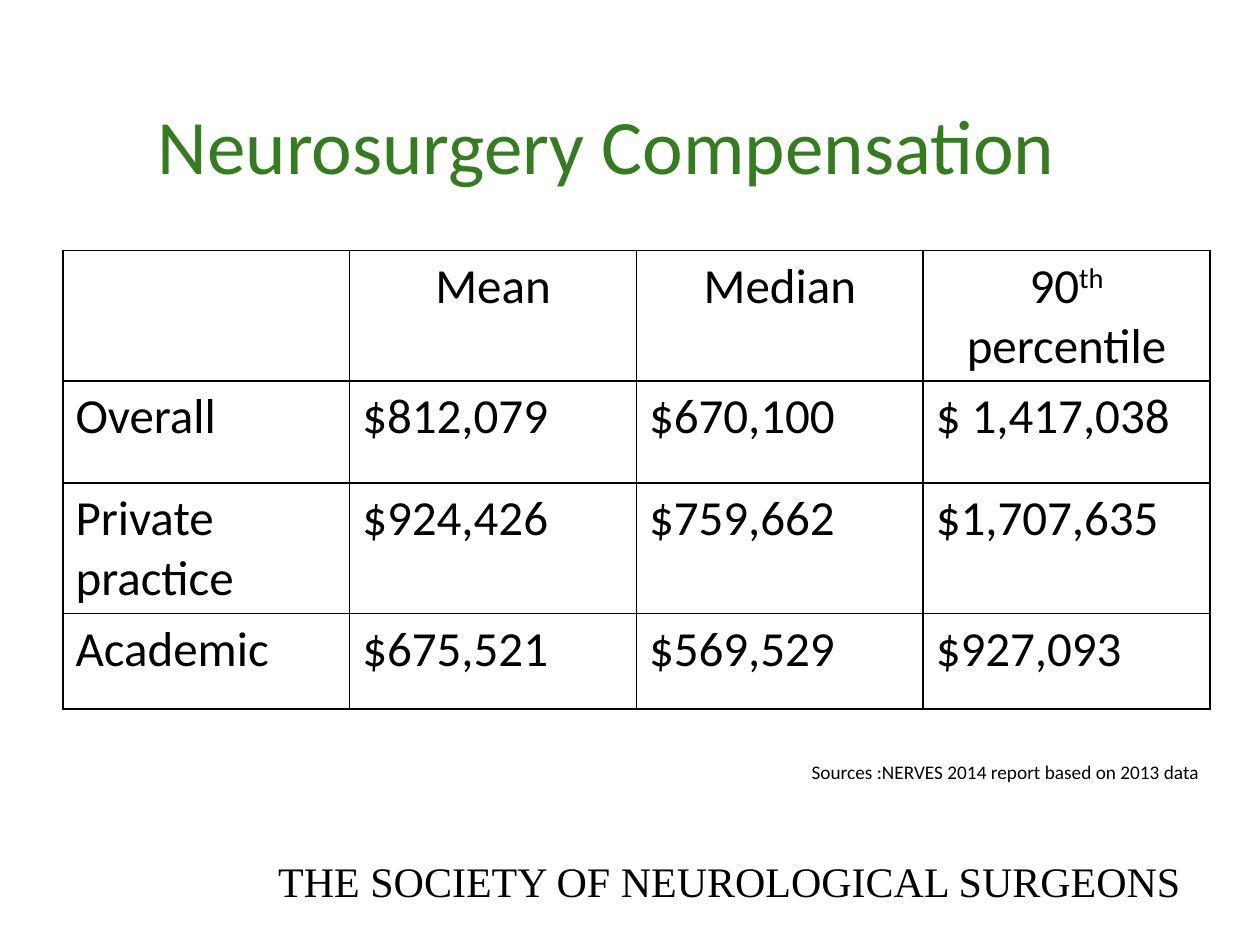
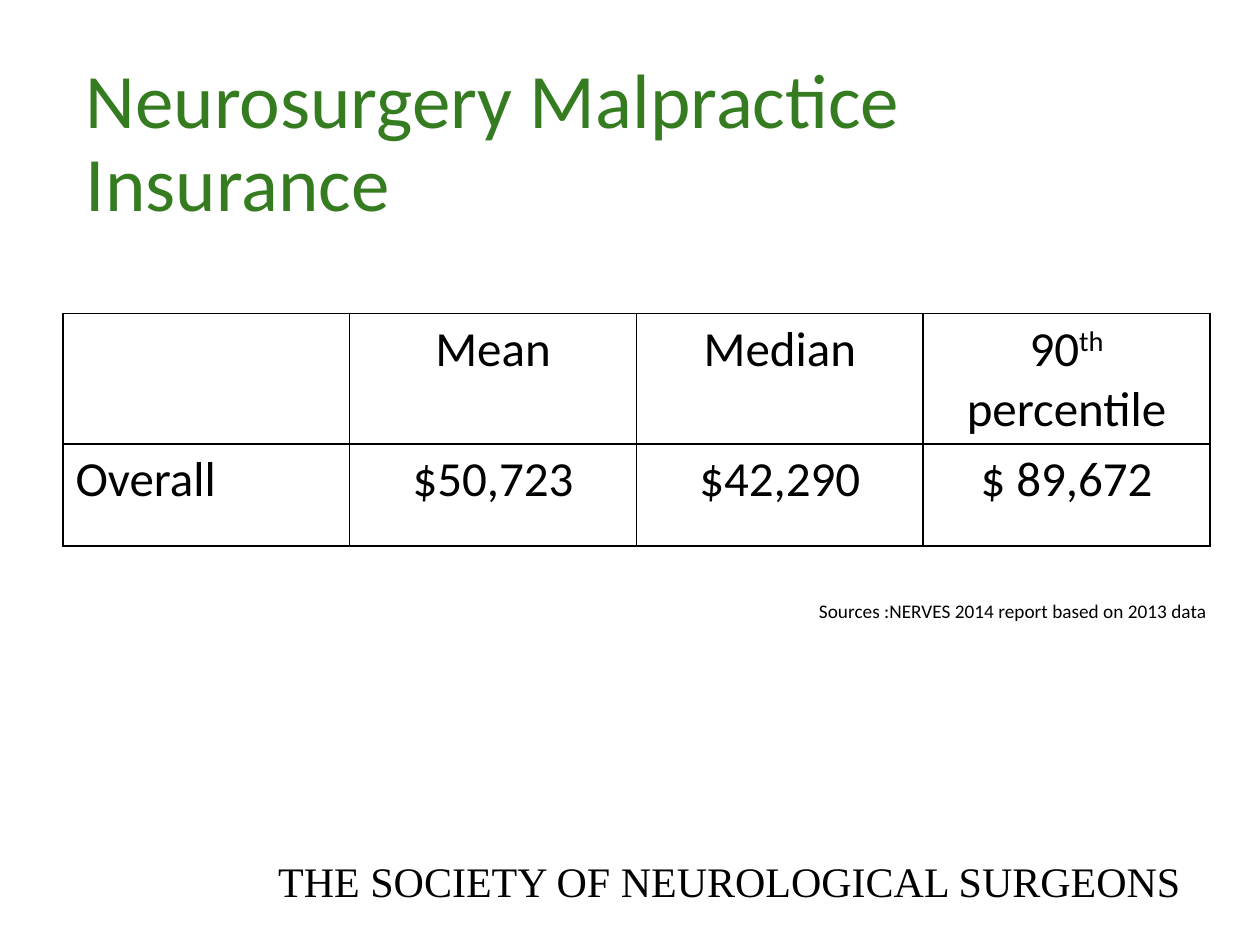
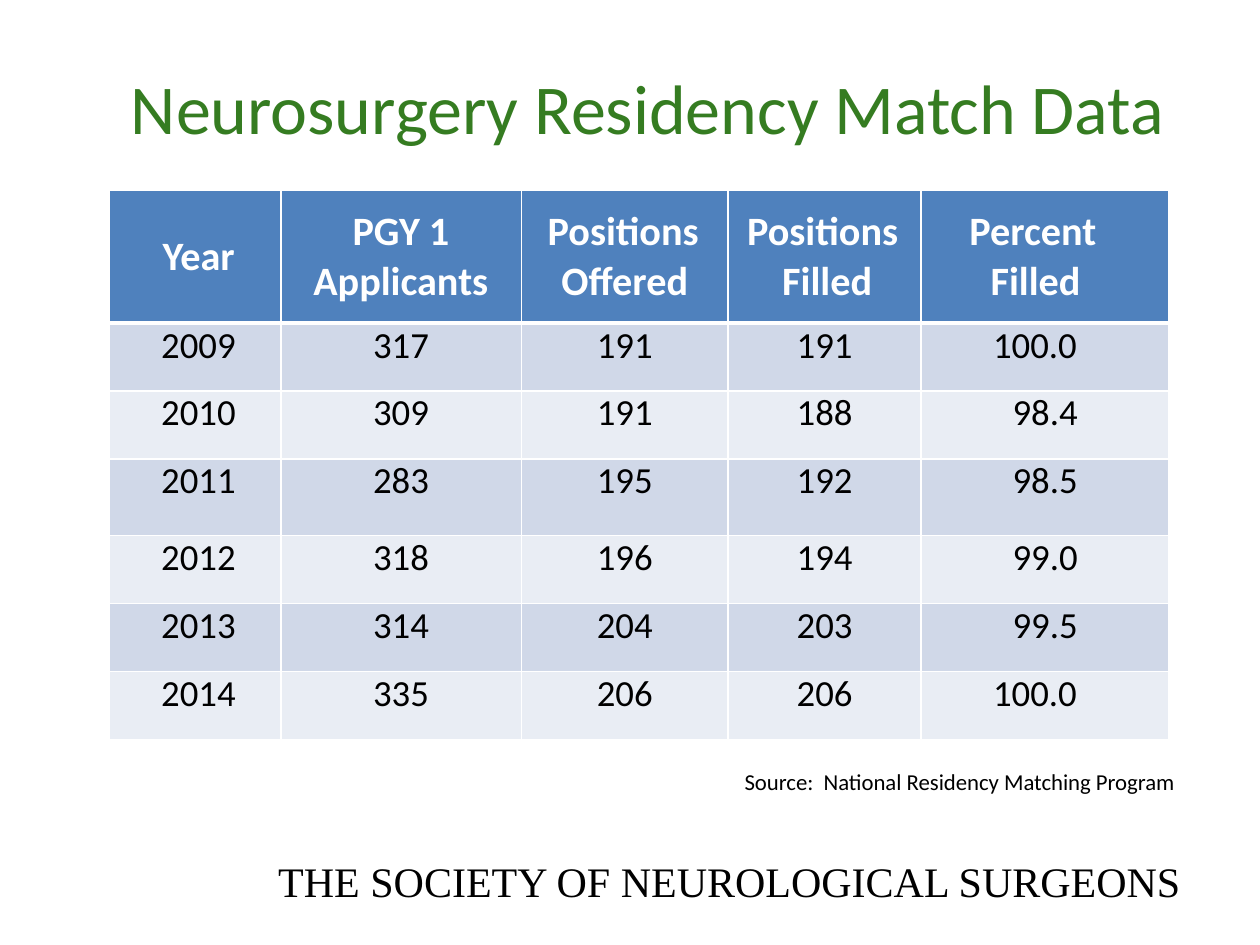
from dataclasses import dataclass
from typing import Optional

import pptx
import pptx.dml.color
import pptx.enum.text
import pptx.oxml
import pptx.oxml.ns
import pptx.slide
import pptx.table
import pptx.text.text
import pptx.util
from pptx.util import Cm

BLACK = pptx.dml.color.RGBColor(0x00, 0x00, 0x00)
WHITE = pptx.dml.color.RGBColor(0xFF, 0xFF, 0xFF)
GREEN = pptx.dml.color.RGBColor(0x35, 0x7C, 0x21)
BLUE = pptx.dml.color.RGBColor(0x4F, 0x81, 0xBD)
DARK_BAND = pptx.dml.color.RGBColor(0xD0, 0xD8, 0xE8)
LIGHT_BAND = pptx.dml.color.RGBColor(0xE9, 0xED, 0xF4)

BODY_FONT = "Calibri"
FOOTER_FONT = "Times New Roman"
LEFT = pptx.enum.text.PP_ALIGN.LEFT
CENTER = pptx.enum.text.PP_ALIGN.CENTER
MIDDLE = pptx.enum.text.MSO_ANCHOR.MIDDLE
TOP = pptx.enum.text.MSO_ANCHOR.TOP
NERVES_SOURCE = "Sources :NERVES 2014 report based on 2013 data"
STATISTICS = ["", "Mean", "Median", "90^th^ percentile"]


@dataclass
class Box:
    left: float
    top: float
    width: float
    height: float


@dataclass
class Title:
    text: str
    box: Box
    size: int = 44
    inset_top: float = 0.28
    indent: float = 0.46


@dataclass
class Source:
    text: str
    box: Box
    size: int = 11
    spacing: float = 1.11


@dataclass
class CellStyle:
    size: int
    color: pptx.dml.color.RGBColor = BLACK
    bold: bool = False
    align: int = LEFT
    anchor: int = TOP
    fill: Optional[pptx.dml.color.RGBColor] = None
    line: pptx.dml.color.RGBColor = BLACK
    top_line: int = 1
    bottom_line: int = 1
    inset: bool = True
    indent: float = 0
    first_line: float = 0


def style_paragraph(p: pptx.text.text._Paragraph, size: int,
                    color: pptx.dml.color.RGBColor, font: str = BODY_FONT,
                    bold: bool = False, align: int = LEFT,
                    indent: float = 0, first_line: float = 0) -> None:
    pPr = p._p.get_or_add_pPr()
    pPr.set("marL", str(Cm(indent)))
    pPr.set("indent", str(Cm(first_line)))
    p.alignment = align
    p.font.name = font
    p.font.size = pptx.util.Pt(size)
    p.font.bold = bold
    p.font.color.rgb = color


def set_margins(tf: pptx.text.text.TextFrame, left: float, top: float) -> None:
    tf.margin_left, tf.margin_top = Cm(left), Cm(top)
    tf.margin_right = tf.margin_bottom = Cm(0)


def add_textbox(slide: pptx.slide.Slide, box: Box) -> pptx.text.text.TextFrame:
    sp = slide.shapes.add_textbox(Cm(box.left), Cm(box.top), Cm(box.width), Cm(box.height))
    return sp.text_frame


def set_title(slide: pptx.slide.Slide, title: Title) -> None:
    sp = slide.shapes.title
    sp.left, sp.top = Cm(title.box.left), Cm(title.box.top)
    sp.width, sp.height = Cm(title.box.width), Cm(title.box.height)
    tf = sp.text_frame
    tf.text = title.text
    tf.word_wrap = True
    tf.auto_size = pptx.enum.text.MSO_AUTO_SIZE.NONE
    tf.vertical_anchor = MIDDLE
    set_margins(tf, 0, title.inset_top)
    p = tf.paragraphs[0]
    style_paragraph(p, title.size, GREEN, indent=title.indent)
    p.line_spacing = 0.9


def add_source(slide: pptx.slide.Slide, source: Source) -> None:
    tf = add_textbox(slide, source.box)
    tf.text = source.text
    tf.word_wrap = True
    set_margins(tf, 0.05, 0)
    p = tf.paragraphs[0]
    style_paragraph(p, source.size, BLACK)
    p.line_spacing = source.spacing


def add_footer(slide: pptx.slide.Slide) -> None:
    tf = add_textbox(slide, Box(5.36, 17.12, 18.87, 1.27))
    tf.text = "THE SOCIETY OF NEUROLOGICAL SURGEONS"
    tf.word_wrap = False
    style_paragraph(tf.paragraphs[0], 24, BLACK, FOOTER_FONT)


def set_borders(cell: pptx.table._Cell, style: CellStyle) -> None:
    tcPr = cell._tc.get_or_add_tcPr()
    widths = {"L": 1, "R": 1, "T": style.top_line, "B": style.bottom_line}
    for side, width in widths.items():
        tcPr.append(pptx.oxml.parse_xml(
            f'<a:ln{side} {pptx.oxml.ns.nsdecls("a")} w="{pptx.util.Pt(width)}">'
            f'<a:solidFill><a:srgbClr val="{style.line}"/></a:solidFill></a:ln{side}>'))


def fill_cell(cell: pptx.table._Cell, text: str, style: CellStyle) -> None:
    set_borders(cell, style)
    if style.fill is None:
        cell.fill.background()
    else:
        cell.fill.solid()
        cell.fill.fore_color.rgb = style.fill
    cell.vertical_anchor = style.anchor
    if not style.inset:
        cell.margin_left = cell.margin_right = cell.margin_top = cell.margin_bottom = Cm(0)
    tf = cell.text_frame
    for row, line in enumerate(text.split("\n")):
        p = tf.add_paragraph() if row else tf.paragraphs[0]
        for part, piece in enumerate(line.split("^")):
            if piece:
                r = p.add_run()
                r.text = piece
                if part % 2:
                    r._r.get_or_add_rPr().set("baseline", "30000")
        style_paragraph(p, style.size, style.color, bold=style.bold, align=style.align,
                        indent=style.indent, first_line=style.first_line)


def add_table(slide: pptx.slide.Slide, left: float, top: float, widths: list[float],
              heights: list[float]) -> pptx.table.Table:
    table = slide.shapes.add_table(len(heights), len(widths), Cm(left), Cm(top),
                                   Cm(sum(widths)), Cm(sum(heights))).table
    table.first_row = table.horz_banding = False
    for column, width in zip(table.columns, widths):
        column.width = Cm(width)
    for row, height in zip(table.rows, heights):
        row.height = Cm(height)
    return table


def add_money_table(slide: pptx.slide.Slide, top: float, heights: list[float],
                    rows: list[list[str]], value_align: int) -> None:
    table = add_table(slide, 1.27, top, [5.78] * 4, heights)
    for i, row in enumerate([STATISTICS] + rows):
        for j, text in enumerate(row):
            align = CENTER if i == 0 else value_align if j else LEFT
            fill_cell(table.cell(i, j), text, CellStyle(28, align=align))


def add_match_table(slide: pptx.slide.Slide) -> None:
    headers = ["Year", "PGY 1\nApplicants", "Positions Offered", "Positions Filled",
               "Percent Filled"]
    header_indents = [(1.07, 0), (0, 0), (0.81, -0.28), (1.09, -0.71), (1.4, -0.43)]
    rows = [
        ["2009", "317", "191", "191", "100.0"],
        ["2010", "309", "191", "188", "98.4"],
        ["2011", "283", "195", "192", "98.5"],
        ["2012", "318", "196", "194", "99.0"],
        ["2013", "314", "204", "203", "99.5"],
        ["2014", "335", "206", "206", "100.0"],
    ]
    table = add_table(slide, 2.21, 3.84, [3.45, 4.85, 4.17, 3.89, 5],
                      [2.67, 1.37, 1.37, 1.55, 1.37, 1.37, 1.37])
    for j, (text, (indent, first_line)) in enumerate(zip(headers, header_indents)):
        fill_cell(table.cell(0, j), text, CellStyle(
            23, WHITE, True, LEFT if indent else CENTER, MIDDLE, BLUE, WHITE,
            bottom_line=3, inset=False, indent=indent, first_line=first_line))
    for i, row in enumerate(rows, 1):
        for j, text in enumerate(row):
            indent = 1.04 if j == 0 else 1.45 if text == "100.0" else 0
            fill_cell(table.cell(i, j), text, CellStyle(
                21, align=LEFT if indent else CENTER,
                fill=DARK_BAND if i % 2 else LIGHT_BAND, line=WHITE,
                top_line=3 if i == 1 else 1, inset=False, indent=indent))


def add_slide(prs: pptx.presentation.Presentation, title: Title,
              source: Source) -> pptx.slide.Slide:
    slide = prs.slides.add_slide(prs.slide_layouts.get_by_name("Title Only"))
    add_footer(slide)
    set_title(slide, title)
    add_source(slide, source)
    return slide


def main() -> None:
    prs = pptx.Presentation()
    prs.slide_width, prs.slide_height = Cm(25.4), Cm(19.05)

    slide = add_slide(prs, Title("Neurosurgery Compensation", Box(2.72, 1.9, 20.22, 1.96)),
                      Source(NERVES_SOURCE, Box(16.31, 15.27, 8.08, 0.53)))
    add_money_table(slide, 5.05, [2.62, 2.06, 2.62, 1.93], [
        ["Overall", "$812,079", "$670,100", "$ 1,417,038"],
        ["Private practice", "$924,426", "$759,662", "$1,707,635"],
        ["Academic", "$675,521", "$569,529", "$927,093"],
    ], LEFT)

    slide = add_slide(prs, Title("Neurosurgery Malpractice Insurance",
                                 Box(1.27, 0.76, 22.86, 4.04)),
                      Source(NERVES_SOURCE, Box(16.46, 12.04, 7.92, 0.53)))
    add_money_table(slide, 6.32, [2.62, 2.06],
                    [["Overall", "$50,723", "$42,290", "$ 89,672"]], CENTER)

    slide = add_slide(prs, Title("Neurosurgery Residency Match Data",
                                 Box(2.49, 1.07, 21.77, 1.96), 40, 0.41, 0.15),
                      Source("Source:  National Residency Matching Program",
                             Box(14.96, 15.47, 10.11, 0.56), 13, 1))
    add_match_table(slide)

    prs.save("out.pptx")


if __name__ == "__main__":
    main()
